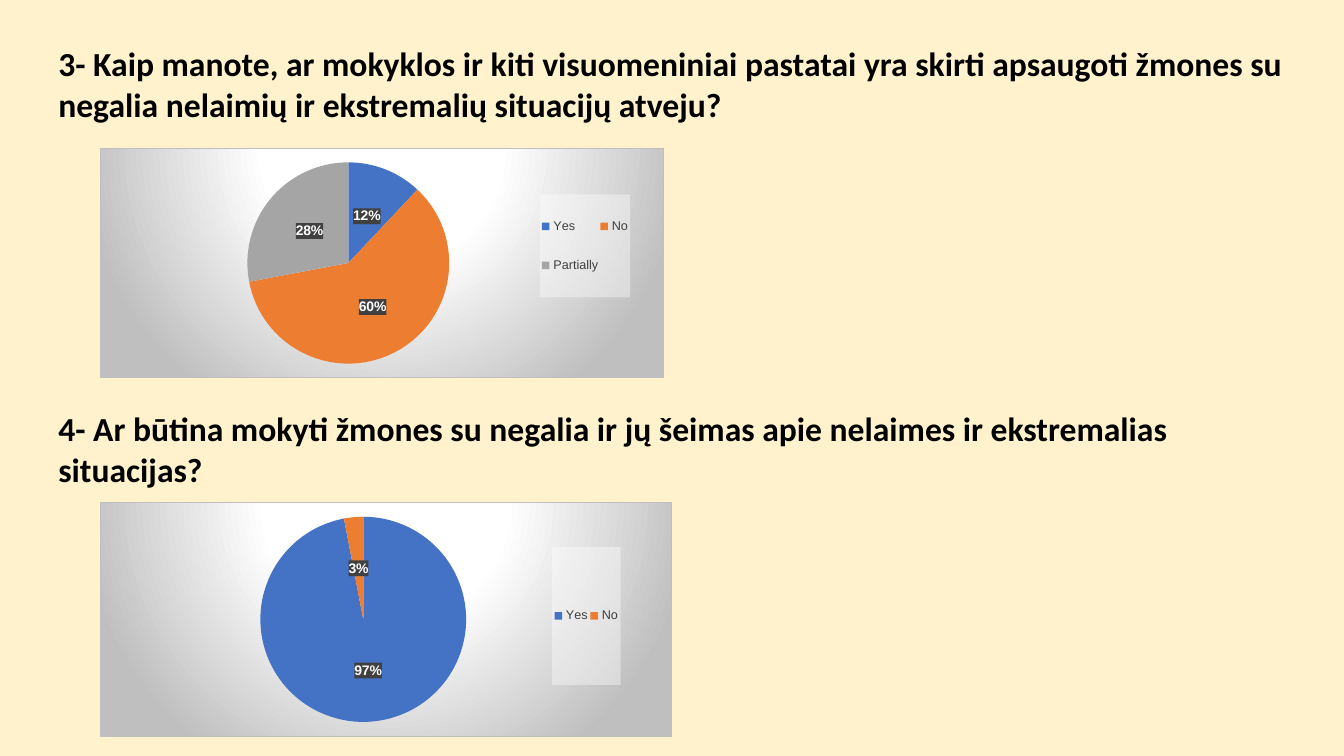
from dataclasses import dataclass

from lxml import etree
from pptx import Presentation
from pptx.chart.chart import Chart
from pptx.chart.data import CategoryChartData
from pptx.dml.color import RGBColor
from pptx.enum.chart import XL_CHART_TYPE, XL_LABEL_POSITION, XL_LEGEND_POSITION
from pptx.oxml import parse_xml
from pptx.oxml.ns import nsdecls, qn
from pptx.slide import Slide
from pptx.text.text import Font
from pptx.util import Inches, Pt

PIE = XL_CHART_TYPE.PIE
CENTER = XL_LABEL_POSITION.CENTER
RIGHT = XL_LEGEND_POSITION.RIGHT

CREAM = RGBColor(0xFF, 0xF2, 0xCC)
BLACK = RGBColor(0x00, 0x00, 0x00)
WHITE = RGBColor(0xFF, 0xFF, 0xFF)
CHARCOAL = RGBColor(0x40, 0x40, 0x40)
SILVER = RGBColor(0xBF, 0xBF, 0xBF)
ANSWER_COLORS = (
    RGBColor(0x44, 0x72, 0xC4),
    RGBColor(0xED, 0x7D, 0x31),
    RGBColor(0xA5, 0xA5, 0xA5),
)


@dataclass(frozen=True)
class Box:
    left: float
    top: float
    width: float
    height: float


@dataclass(frozen=True)
class Question:
    wording: str
    wording_box: Box
    answers: dict[str, int]
    chart_box: Box
    pie_area: Box
    legend_area: Box


QUESTIONS = (
    Question(
        "3- Kaip manote, ar mokyklos ir kiti visuomeniniai pastatai yra skirti "
        "apsaugoti žmones su negalia nelaimių ir ekstremalių situacijų atveju?",
        Box(0.48, 0.38, 12.49, 0.91),
        {"Yes": 12, "No": 60, "Partially": 28},
        Box(0.99, 1.47, 5.6, 2.28),
        Box(0.26, 0.06, 0.36, 0.88),
        Box(0.78, 0.2, 0.16, 0.45),
    ),
    Question(
        "4- Ar būtina mokyti žmones su negalia ir jų šeimas apie nelaimes ir "
        "ekstremalias situacijas?",
        Box(0.48, 4, 12.21, 0.91),
        {"Yes": 97, "No": 3},
        Box(0.99, 4.98, 5.68, 2.33),
        Box(0.28, 0.06, 0.36, 0.88),
        Box(0.79, 0.19, 0.12, 0.59),
    ),
)


def inches(box: Box) -> tuple[int, int, int, int]:
    return Inches(box.left), Inches(box.top), Inches(box.width), Inches(box.height)


def style_font(font: Font, name: str, size: float, color: RGBColor, bold: bool = False) -> None:
    font.name = name
    font.size = Pt(size)
    font.bold = bold
    font.color.rgb = color


def manual_layout(area: Box, target: str = "") -> etree._Element:
    return parse_xml(
        f'<c:layout {nsdecls("c")}><c:manualLayout>{target}'
        '<c:xMode val="edge"/><c:yMode val="edge"/>'
        f'<c:x val="{area.left}"/><c:y val="{area.top}"/>'
        f'<c:w val="{area.width}"/><c:h val="{area.height}"/>'
        "</c:manualLayout></c:layout>"
    )


def shape_properties(content: str) -> etree._Element:
    return parse_xml(f'<c:spPr {nsdecls("c", "a")}>{content}</c:spPr>')


def translucent_fill(color: RGBColor, percent: int) -> etree._Element:
    return shape_properties(
        f'<a:solidFill><a:srgbClr val="{color}"><a:alpha val="{percent * 1000}"/>'
        "</a:srgbClr></a:solidFill><a:ln><a:noFill/></a:ln>"
    )


def spotlight_background() -> etree._Element:
    stops = "".join(
        f'<a:gs pos="{position * 1000}"><a:srgbClr val="{color}"/></a:gs>'
        for position, color in ((0, WHITE), (39, WHITE), (100, SILVER))
    )
    return shape_properties(
        f'<a:gradFill><a:gsLst>{stops}</a:gsLst><a:path path="circle">'
        '<a:fillToRect l="50000" t="-80000" r="50000" b="180000"/></a:path></a:gradFill>'
        f'<a:ln w="9525"><a:solidFill><a:srgbClr val="{SILVER}"/></a:solidFill></a:ln>'
    )


def remove_layout(parent: etree._Element) -> None:
    for layout in parent.findall(qn("c:layout")):
        parent.remove(layout)


def style_pie(chart: Chart, question: Question) -> None:
    plot = chart.plots[0]
    plot.vary_by_categories = True
    for index, color in zip(range(len(question.answers)), ANSWER_COLORS):
        fill = plot.series[0].points[index].format.fill
        fill.solid()
        fill.fore_color.rgb = color

    plot.has_data_labels = True
    labels = plot.data_labels
    labels.show_value = False
    labels.show_percentage = True
    labels.number_format = "0%"
    labels.number_format_is_linked = False
    labels.position = CENTER
    style_font(labels.font, "Arial", 10, WHITE, bold=True)
    label_text = chart.element.find(".//" + qn("c:dLbls")).find(qn("c:txPr"))
    label_text.addprevious(translucent_fill(CHARCOAL, 90))

    plot_area = chart.element.find(".//" + qn("c:plotArea"))
    remove_layout(plot_area)
    plot_area.insert(0, manual_layout(question.pie_area, '<c:layoutTarget val="inner"/>'))


def style_legend(chart: Chart, area: Box) -> None:
    chart.has_legend = True
    chart.legend.position = RIGHT
    chart.legend.include_in_layout = False
    style_font(chart.legend.font, "Arial", 9, CHARCOAL)
    legend = chart.element.find(".//" + qn("c:legend"))
    remove_layout(legend)
    legend.find(qn("c:overlay")).addprevious(manual_layout(area))
    legend.find(qn("c:txPr")).addprevious(translucent_fill(WHITE, 39))


def add_wording(slide: Slide, question: Question) -> None:
    frame = slide.shapes.add_textbox(*inches(question.wording_box)).text_frame
    frame.word_wrap = True
    frame.text = question.wording
    style_font(frame.paragraphs[0].runs[0].font, "Calibri", 24, BLACK, bold=True)


def add_answers(slide: Slide, question: Question) -> None:
    data = CategoryChartData()
    data.categories = list(question.answers)
    data.add_series("Series 1", list(question.answers.values()))
    chart = slide.shapes.add_chart(PIE, *inches(question.chart_box), data).chart
    chart.has_title = False
    style_font(chart.font, "Arial", 10, BLACK)
    chart.element.find(qn("c:txPr")).addprevious(spotlight_background())
    style_pie(chart, question)
    style_legend(chart, question.legend_area)


def main() -> None:
    presentation = Presentation()
    presentation.slide_width = Inches(13.33)
    presentation.slide_height = Inches(7.5)
    slide = presentation.slides.add_slide(presentation.slide_layouts[6])
    slide.background.fill.solid()
    slide.background.fill.fore_color.rgb = CREAM
    for question in QUESTIONS:
        add_wording(slide, question)
        add_answers(slide, question)
    presentation.save("out.pptx")


if __name__ == "__main__":
    main()
